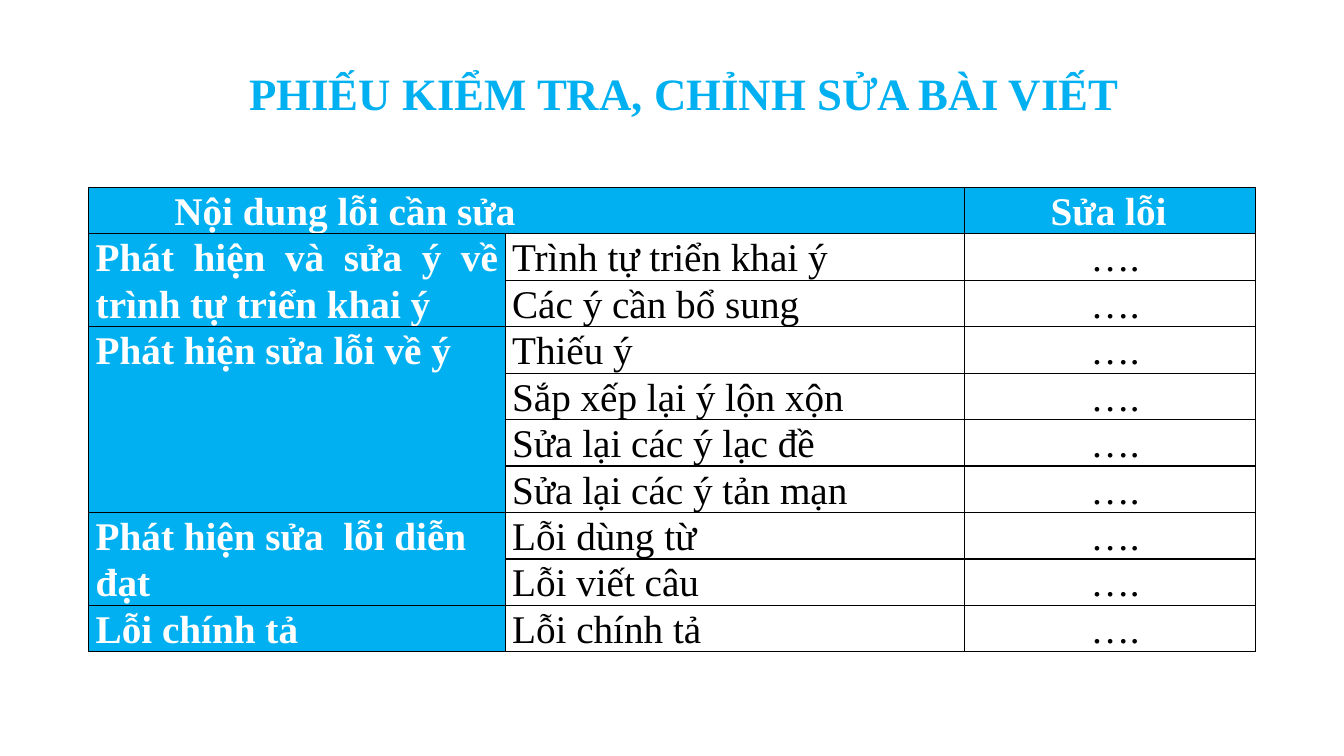
from lxml.etree import SubElement as Sub
from pptx import Presentation
from pptx.dml.color import RGBColor as RGB
from pptx.enum.text import MSO_ANCHOR as Anchor, MSO_AUTO_SIZE as Auto, PP_ALIGN as Align
from pptx.oxml.ns import qn
from pptx.util import Emu, Inches, Pt

BLUE = RGB(0x00, 0xB0, 0xF0)
WHITE = RGB(0xFF, 0xFF, 0xFF)
BLACK = RGB(0x00, 0x00, 0x00)
FONT = "Times New Roman"

TITLE = "PHIẾU KIỂM TRA, CHỈNH SỬA BÀI VIẾT"
HEADS = ["Nội dung lỗi cần sửa", "Sửa lỗi"]
GROUPS = [
    ("Phát hiện và sửa ý về trình tự triển khai ý",
     ["Trình tự triển khai ý", "Các ý cần bổ sung"]),
    ("Phát hiện sửa lỗi về ý",
     ["Thiếu ý", "Sắp xếp lại ý lộn xộn", "Sửa lại các ý lạc đề", "Sửa lại các ý tản mạn"]),
    ("Phát hiện sửa  lỗi diễn đạt", ["Lỗi dùng từ", "Lỗi viết câu"]),
    ("Lỗi chính tả", ["Lỗi chính tả"]),
]
COLS = [4.13, 4.56, 2.88]
ROW = 0.46


def write(frame, text, size=28, color=BLACK, bold=False, align=Align.LEFT,
          space=1.07, indent=0):
    par = frame.paragraphs[0]
    par.alignment = align
    par.line_spacing = space
    if indent:
        props = par._p.get_or_add_pPr()
        props.set("marL", str(Inches(indent)))
        props.set("indent", "0")
    run = par.add_run()
    run.text = text
    font = run.font
    font.name, font.size, font.bold = FONT, Pt(size), bold
    font.color.rgb = color


def frame_cell(cell, fill=None):
    """Set margins, thin black borders and the fill of one cell."""
    cell.margin_left = cell.margin_right = Inches(0.07)
    cell.margin_top = cell.margin_bottom = 0
    props = cell._tc.get_or_add_tcPr()
    for side in ("lnL", "lnR", "lnT", "lnB"):
        line = Sub(props, qn("a:" + side), w=str(Pt(1)))
        Sub(Sub(line, qn("a:solidFill")), qn("a:srgbClr"), val=str(BLACK))
    if fill is None:
        cell.fill.background()
    else:
        cell.fill.solid()
        cell.fill.fore_color.rgb = fill


def add_title(slide, left, top, width, height):
    title = slide.shapes.title
    title.left, title.top = Inches(left), Inches(top)
    title.width, title.height = Inches(width), Inches(height)
    frame = title.text_frame
    frame.auto_size = Auto.NONE
    frame.word_wrap = False
    frame.vertical_anchor = Anchor.MIDDLE
    write(frame, TITLE, size=32, color=BLUE, bold=True, space=1)


def add_sheet(slide, left, top, width):
    count = 1 + sum(len(items) for _, items in GROUPS)
    table = slide.shapes.add_table(count, len(COLS), Inches(left), Inches(top),
                                   Inches(width), Inches(ROW * count)).table
    table.horz_banding = False
    for col, share in zip(table.columns, COLS):
        col.width = Emu(int(Inches(width) * share / sum(COLS)))
    for row in table.rows:
        row.height = Inches(ROW)

    # Blue header row and first column
    for r in range(count):
        for c in range(len(COLS)):
            frame_cell(table.cell(r, c), BLUE if r == 0 or c == 0 else None)

    # Header
    table.cell(0, 0).merge(table.cell(0, 1))
    for c, head in zip((0, 2), HEADS):
        write(table.cell(0, c).text_frame, head, color=WHITE, bold=True, indent=0.78)

    # Groups of errors
    r = 1
    for n, (name, items) in enumerate(GROUPS):
        group = table.cell(r, 0)
        if len(items) > 1:
            group.merge(table.cell(r + len(items) - 1, 0))
        write(group.text_frame, name, color=WHITE, bold=True,
              align=Align.JUSTIFY if n == 0 else Align.LEFT)
        for item in items:
            write(table.cell(r, 1).text_frame, item)
            write(table.cell(r, 2).text_frame, "….", align=Align.CENTER, indent=0.1)
            r += 1


def main():
    deck = Presentation()
    deck.slide_width, deck.slide_height = Inches(13.33), Inches(7.5)
    slide = deck.slides.add_slide(deck.slide_layouts[5])
    add_title(slide, 2.37, 0.6, 8.92, 0.64)
    add_sheet(slide, 0.88, 1.86, 11.57)
    deck.save("out.pptx")


if __name__ == "__main__":
    main()
